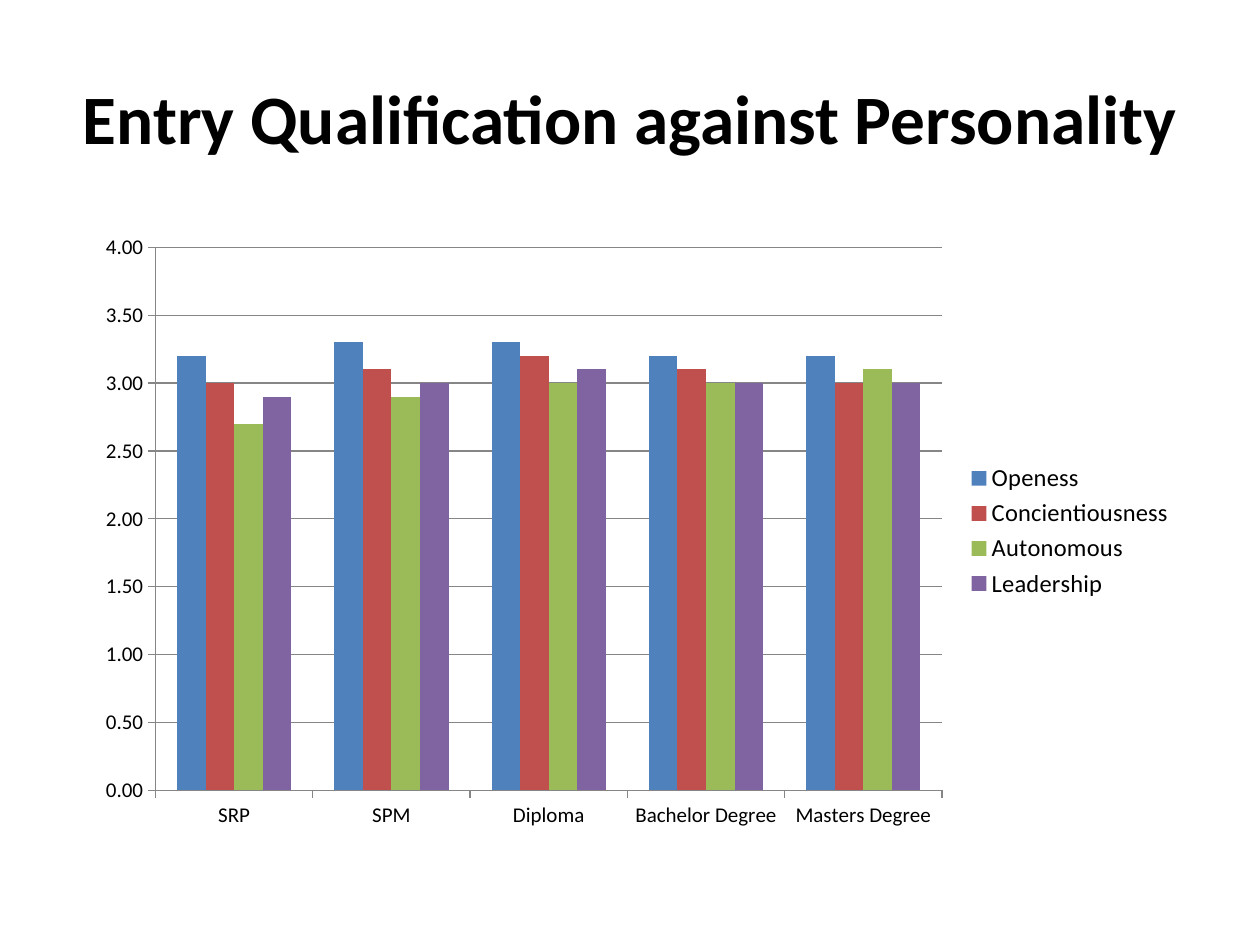
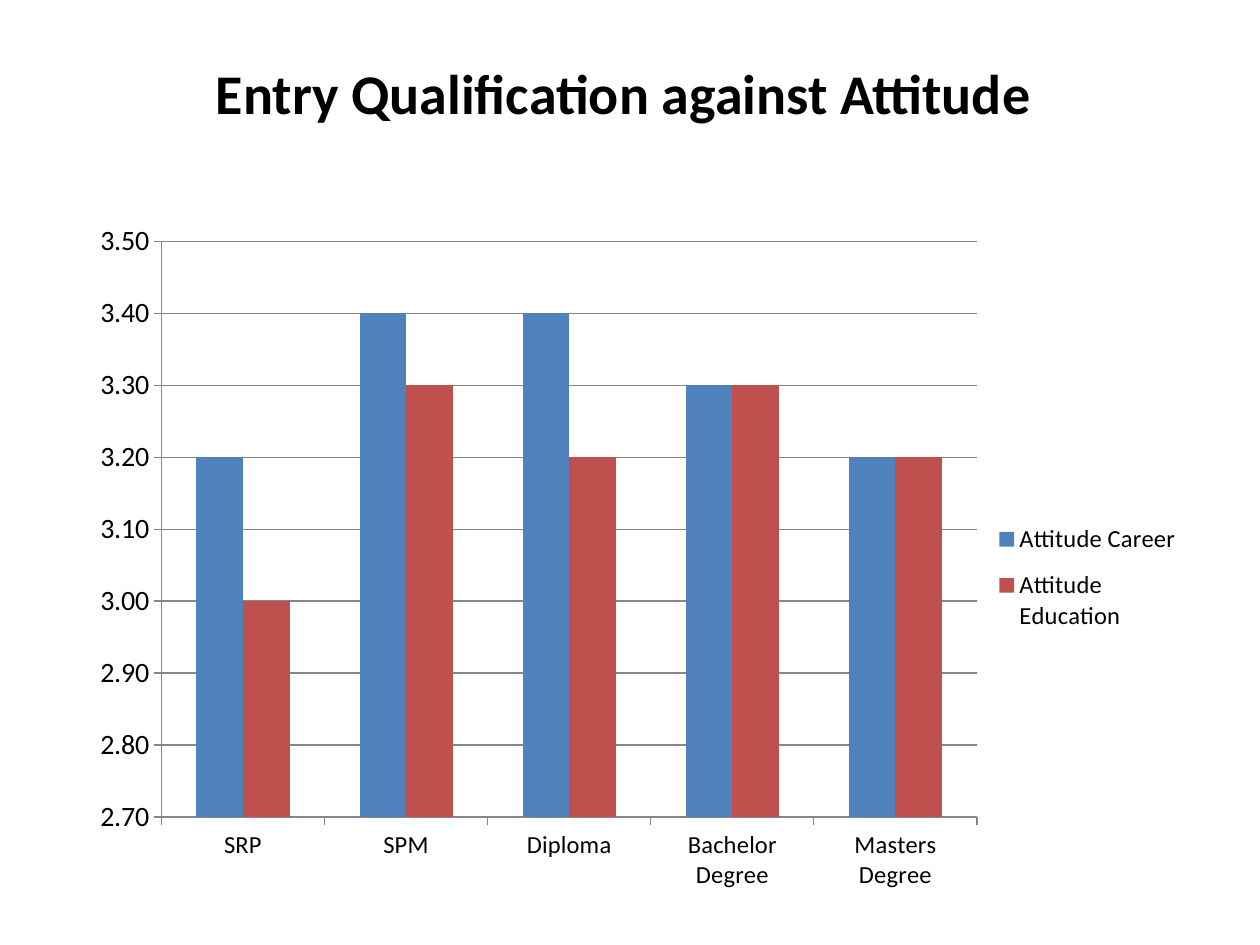
from dataclasses import dataclass

from lxml import etree
from pptx import Presentation
from pptx.chart.data import CategoryChartData
from pptx.dml.color import RGBColor
from pptx.enum.chart import XL_CHART_TYPE, XL_LEGEND_POSITION, XL_TICK_MARK
from pptx.enum.text import MSO_ANCHOR, PP_ALIGN
from pptx.oxml.ns import qn
from pptx.util import Pt

CLUSTERED = XL_CHART_TYPE.COLUMN_CLUSTERED
LEGEND_RIGHT = XL_LEGEND_POSITION.RIGHT
TICK_OUTSIDE = XL_TICK_MARK.OUTSIDE
MIDDLE = MSO_ANCHOR.MIDDLE
CENTER = PP_ALIGN.CENTER


@dataclass(frozen=True)
class Theme:
    font: str = "Calibri"
    text: str = "000000"
    axis: str = "868686"
    series: tuple = ("4F81BD", "C0504D", "9BBB59", "8064A2")
    legend_size: int = 14
    line_width: float = 0.75
    gap_width: int = 150


THEME = Theme()
QUALIFICATIONS = ["SRP", "SPM", "Diploma", "Bachelor Degree", "Masters Degree"]

SLIDES = [
    {
        "title": "Entry Qualification against Personality",
        "title_size": 39.6,
        "title_height": 90,
        "chart_box": (48.24, 127.44, 630, 352.8),
        "plot_box": (88.9, 141.4, 449.4, 310.3),
        "legend_box": (551.4, 262, 120, 83),
        "scale": (0, 4, 0.5),
        "category_size": 12,
        "value_size": 12,
        "series": {
            "Openess": (3.2, 3.3, 3.3, 3.2, 3.2),
            "Concientiousness": (3, 3.1, 3.2, 3.1, 3),
            "Autonomous": (2.7, 2.9, 3, 3, 3.1),
            "Leadership": (2.9, 3, 3.1, 3, 3),
        },
    },
    {
        "title": "Entry Qualification against Attitude ",
        "title_size": 32,
        "title_height": 62.64,
        "chart_box": (44.64, 120.24, 642.24, 396.72),
        "plot_box": (92.3, 137.9, 466, 329.1),
        "legend_box": (566.4, 290.5, 110, 79),
        "scale": (2.7, 3.5, 0.1),
        "category_size": 14,
        "value_size": 16,
        "series": {
            "Attitude Career": (3.2, 3.4, 3.4, 3.3, 3.2),
            "Attitude Education": (3, 3.3, 3.2, 3.3, 3.2),
        },
    },
]


def style_font(font, size, bold=False):
    font.name = THEME.font
    font.size = Pt(size)
    font.bold = bold
    font.color.rgb = RGBColor.from_string(THEME.text)


def style_line(line):
    line.color.rgb = RGBColor.from_string(THEME.axis)
    line.width = Pt(THEME.line_width)


def make_layout(box, chart_box, inner=False):
    left, top, width, height = box
    chart_left, chart_top, chart_width, chart_height = chart_box
    layout = etree.Element(qn("c:layout"))
    manual = etree.SubElement(layout, qn("c:manualLayout"))
    settings = [("layoutTarget", "inner")] if inner else []
    settings += [
        ("xMode", "edge"),
        ("yMode", "edge"),
        ("x", (left - chart_left) / chart_width),
        ("y", (top - chart_top) / chart_height),
        ("w", width / chart_width),
        ("h", height / chart_height),
    ]
    for name, value in settings:
        etree.SubElement(manual, qn(f"c:{name}")).set("val", str(value))
    return layout


def remove_layout(element):
    for layout in element.findall(qn("c:layout")):
        element.remove(layout)


def add_title(slide, content):
    box = slide.shapes.add_textbox(Pt(36), Pt(21.6), Pt(648), Pt(content["title_height"]))
    frame = box.text_frame
    frame.word_wrap = True
    frame.vertical_anchor = MIDDLE
    frame.text = content["title"]
    paragraph = frame.paragraphs[0]
    paragraph.alignment = CENTER
    style_font(paragraph.runs[0].font, content["title_size"], bold=True)


def style_axes(chart, content):
    category_axis, value_axis = chart.category_axis, chart.value_axis
    for axis, size in (
        (category_axis, content["category_size"]),
        (value_axis, content["value_size"]),
    ):
        axis.major_tick_mark = TICK_OUTSIDE
        style_line(axis.format.line)
        style_font(axis.tick_labels.font, size)
    value_axis.minimum_scale, value_axis.maximum_scale, value_axis.major_unit = content["scale"]
    value_axis.has_major_gridlines = True
    style_line(value_axis.major_gridlines.format.line)
    value_axis.tick_labels.number_format = "###0.00"
    value_axis.tick_labels.number_format_is_linked = False


def add_legend(chart, content):
    chart.has_legend = True
    legend = chart.legend
    legend.position = LEGEND_RIGHT
    legend.include_in_layout = False
    style_font(legend.font, THEME.legend_size)
    element = legend._element
    remove_layout(element)
    layout = make_layout(content["legend_box"], content["chart_box"])
    element.find(qn("c:overlay")).addprevious(layout)


def add_column_chart(slide, content):
    data = CategoryChartData(number_format="###0.00")
    data.categories = QUALIFICATIONS
    for name, values in content["series"].items():
        data.add_series(name, values)
    box = [Pt(length) for length in content["chart_box"]]
    chart = slide.shapes.add_chart(CLUSTERED, *box, data).chart
    chart.has_title = False
    style_font(chart.font, content["category_size"])
    style_axes(chart, content)
    add_legend(chart, content)

    plot = chart.plots[0]
    plot.gap_width = THEME.gap_width
    plot.overlap = 0
    plot.vary_by_categories = False
    for series, color in zip(plot.series, THEME.series):
        series.format.fill.solid()
        series.format.fill.fore_color.rgb = RGBColor.from_string(color)

    plot_area = chart._chartSpace.find(f".//{qn('c:plotArea')}")
    remove_layout(plot_area)
    plot_area.insert(0, make_layout(content["plot_box"], content["chart_box"], inner=True))


def main():
    presentation = Presentation()
    presentation.slide_width = Pt(720)
    presentation.slide_height = Pt(540)
    blank = presentation.slide_layouts[6]
    for content in SLIDES:
        slide = presentation.slides.add_slide(blank)
        add_title(slide, content)
        add_column_chart(slide, content)
    presentation.save("out.pptx")


if __name__ == "__main__":
    main()
